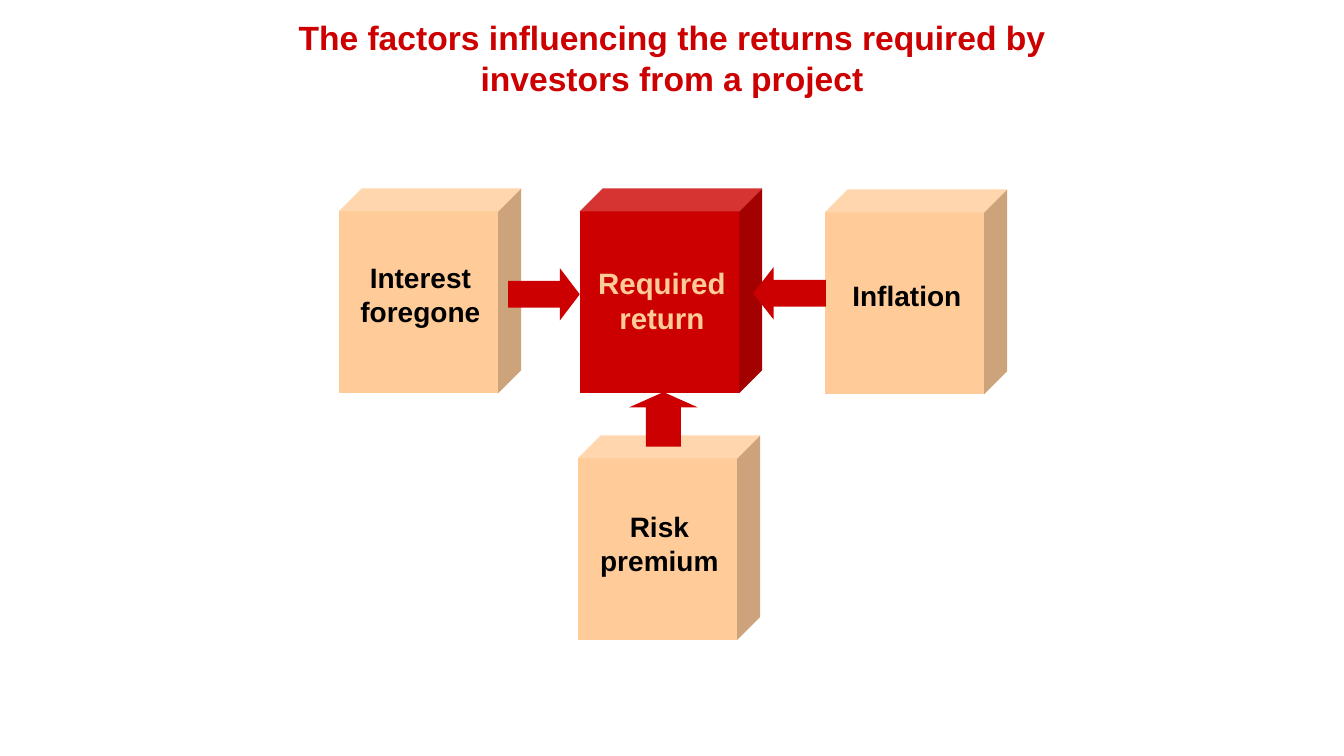
from dataclasses import dataclass

from pptx import Presentation
from pptx import util as u
from pptx.dml import color
from pptx.enum import shapes, text


@dataclass(frozen=True)
class Theme:
    font: str = "Arial"
    red: str = "CC0000"
    peach: str = "FFCC99"
    black: str = "000000"
    title_size: int = 24
    result_size: int = 21
    factor_size: int = 20


class FactorSlide:
    def __init__(self, deck, theme):
        self.theme = theme
        self.slide = deck.slides.add_slide(deck.slide_layouts[5])

    def set_wording(self, frame, wording, size, ink):
        frame.text = wording
        frame.word_wrap = True
        frame.auto_size = text.MSO_AUTO_SIZE.NONE
        frame.vertical_anchor = text.MSO_ANCHOR.TOP
        paragraph = frame.paragraphs[0]
        paragraph.alignment = text.PP_ALIGN.CENTER
        paragraph.line_spacing = 1.0
        paragraph.space_before = u.Pt(0)
        font = paragraph.runs[0].font
        font.name = self.theme.font
        font.size = u.Pt(size)
        font.bold = True
        font.color.rgb = color.RGBColor.from_string(ink)

    def title(self, wording, place):
        heading = self.slide.shapes.title
        heading.left, heading.top, heading.width, heading.height = map(u.Inches, place)
        self.set_wording(heading.text_frame, wording, self.theme.title_size, self.theme.red)

    def solid(self, preset, place, fill, adjustments):
        body = self.slide.shapes.add_shape(preset, *map(u.Inches, place))
        body.shadow.inherit = False
        body.fill.solid()
        body.fill.fore_color.rgb = color.RGBColor.from_string(fill)
        body.line.fill.background()
        for index, value in enumerate(adjustments):
            body.adjustments[index] = value

    def cube(self, left, top, fill):
        self.solid(shapes.MSO_SHAPE.CUBE, (left, top, 1.81, 2.03), fill, [0.126])

    def label(self, wording, place, size, ink):
        caption = self.slide.shapes.add_textbox(*map(u.Inches, place))
        self.set_wording(caption.text_frame, wording, size, ink)

    def arrow(self, preset, place, head):
        self.solid(preset, place, self.theme.red, [0.51, head])


def main():
    theme = Theme()
    deck = Presentation()
    deck.slide_width, deck.slide_height = u.Inches(13.33), u.Inches(7.5)
    page = FactorSlide(deck, theme)

    page.title(
        "The factors influencing the returns required by investors from a project",
        (2.78, 0.12, 7.77, 0.91),
    )

    factors = [
        ("Risk premium", (5.73, 4.32), (5.6, 5.01, 1.88, 0.77)),
        ("Interest foregone", (3.36, 1.87), (3.34, 2.54, 1.66, 0.77)),
        ("Inflation", (8.18, 1.88), (8.18, 2.71, 1.63, 0.44)),
    ]
    for factor, corner, caption_place in factors:
        page.cube(*corner, theme.peach)
        page.label(factor, caption_place, theme.factor_size, theme.black)

    page.cube(5.75, 1.87, theme.red)
    page.label("Required return", (5.73, 2.58, 1.67, 0.81), theme.result_size, theme.peach)

    preset = shapes.MSO_SHAPE
    page.arrow(preset.UP_ARROW, (6.24, 3.89, 0.68, 0.54), 0.28)
    page.arrow(preset.RIGHT_ARROW, (5.04, 2.66, 0.71, 0.52), 0.38)
    page.arrow(preset.LEFT_ARROW, (7.47, 2.65, 0.72, 0.52), 0.39)

    deck.save("out.pptx")


if __name__ == "__main__":
    main()
